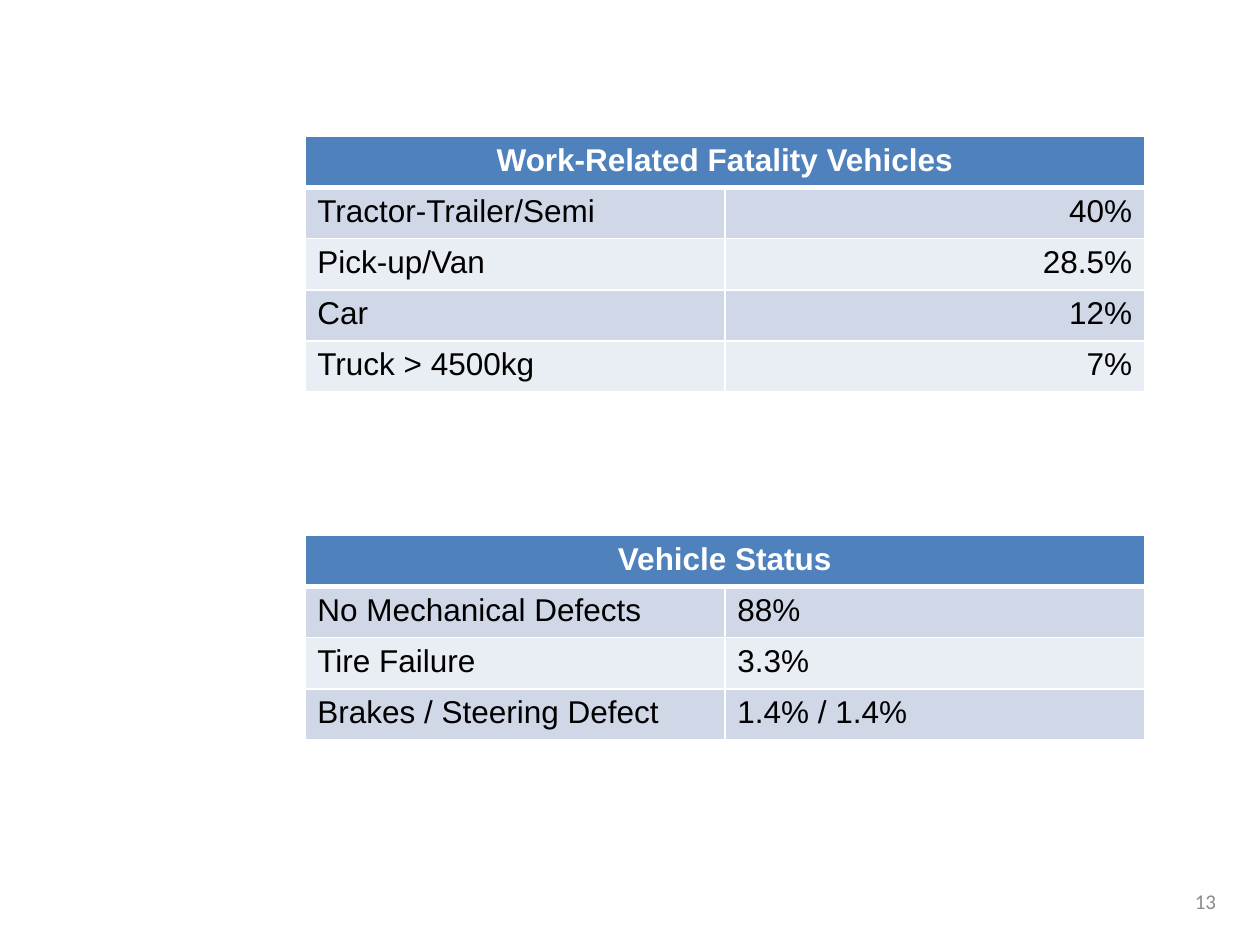
import dataclasses

import lxml.etree
import pptx
import pptx.dml.color
import pptx.enum.text
import pptx.oxml.ns
import pptx.util

Pt = pptx.util.Pt
Align = pptx.enum.text.PP_ALIGN
Anchor = pptx.enum.text.MSO_ANCHOR


@dataclasses.dataclass(frozen=True)
class Theme:
    table_font: str = "Arial"
    number_font: str = "Calibri"
    table_size: float = 18
    number_size: float = 12
    header_fill: str = "4F81BD"
    band_fills: tuple[str, str] = ("D0D8E8", "E9EDF4")
    light: str = "FFFFFF"
    dark: str = "000000"
    muted: str = "8C8C8C"
    thin: float = 1
    thick: float = 3


@dataclasses.dataclass(frozen=True)
class StatTable:
    heading: str
    top: float
    rows: tuple[tuple[str, str], ...]
    value_align: Align


THEME = Theme()
TABLE_LEFT = 174.2
COLUMN_WIDTH = 240
ROW_HEIGHT = 29.2

TABLES = (
    StatTable(
        "Work-Related Fatality Vehicles",
        78,
        (
            ("Tractor-Trailer/Semi", "40%"),
            ("Pick-up/Van", "28.5%"),
            ("Car", "12%"),
            ("Truck > 4500kg", "7%"),
        ),
        Align.RIGHT,
    ),
    StatTable(
        "Vehicle Status",
        306,
        (
            ("No Mechanical Defects", "88%"),
            ("Tire Failure", "3.3%"),
            ("Brakes / Steering Defect", "1.4% / 1.4%"),
        ),
        Align.LEFT,
    ),
)


def rgb(value: str) -> pptx.dml.color.RGBColor:
    return pptx.dml.color.RGBColor.from_string(value)


def format_para(para, font: str, size: float, color: str, align: Align, bold: bool = False) -> None:
    para.alignment = align
    para.font.name = font
    para.font.size = Pt(size)
    para.font.bold = bold
    para.font.color.rgb = rgb(color)


def add_borders(cell, top: float, bottom: float) -> None:
    qn = pptx.oxml.ns.qn
    properties = cell._tc.get_or_add_tcPr()
    widths = {"lnL": THEME.thin, "lnR": THEME.thin, "lnT": top, "lnB": bottom}
    for side, width in widths.items():
        line = lxml.etree.SubElement(properties, qn(f"a:{side}"), w=str(Pt(width)))
        fill = lxml.etree.SubElement(line, qn("a:solidFill"))
        lxml.etree.SubElement(fill, qn("a:srgbClr"), val=THEME.light)


def format_cell(cell, text: str, row: int, align: Align) -> None:
    header = row == 0
    add_borders(
        cell,
        top=THEME.thick if row == 1 else THEME.thin,
        bottom=THEME.thick if header else THEME.thin,
    )
    cell.fill.solid()
    cell.fill.fore_color.rgb = rgb(THEME.header_fill if header else THEME.band_fills[(row - 1) % 2])
    cell.text = text
    color = THEME.light if header else THEME.dark
    format_para(cell.text_frame.paragraphs[0], THEME.table_font, THEME.table_size, color, align, header)


def add_stat_table(page, stat: StatTable) -> None:
    row_count = len(stat.rows) + 1
    table = page.shapes.add_table(
        row_count, 2,
        Pt(TABLE_LEFT), Pt(stat.top), Pt(2 * COLUMN_WIDTH), Pt(row_count * ROW_HEIGHT),
    ).table
    for column in table.columns:
        column.width = Pt(COLUMN_WIDTH)
    for table_row in table.rows:
        table_row.height = Pt(ROW_HEIGHT)
    for row, texts in enumerate(((stat.heading, ""), *stat.rows)):
        aligns = (Align.LEFT, stat.value_align) if row else (Align.CENTER, Align.CENTER)
        for column, (text, align) in enumerate(zip(texts, aligns)):
            format_cell(table.cell(row, column), text, row, align)
    table.cell(0, 0).merge(table.cell(0, 1))


def add_page_number(page, number: str) -> None:
    box = page.shapes.add_textbox(Pt(618), Pt(500.5), Pt(84), Pt(28.8))
    box.text_frame.word_wrap = True
    box.text_frame.vertical_anchor = Anchor.MIDDLE
    box.text_frame.text = number
    para = box.text_frame.paragraphs[0]
    format_para(para, THEME.number_font, THEME.number_size, THEME.muted, Align.RIGHT)


def main() -> None:
    deck = pptx.Presentation()
    deck.slide_width, deck.slide_height = Pt(720), Pt(540)
    page = deck.slides.add_slide(deck.slide_layouts.get_by_name("Blank"))
    add_page_number(page, "13")
    for stat in TABLES:
        add_stat_table(page, stat)
    deck.save("out.pptx")


if __name__ == "__main__":
    main()
